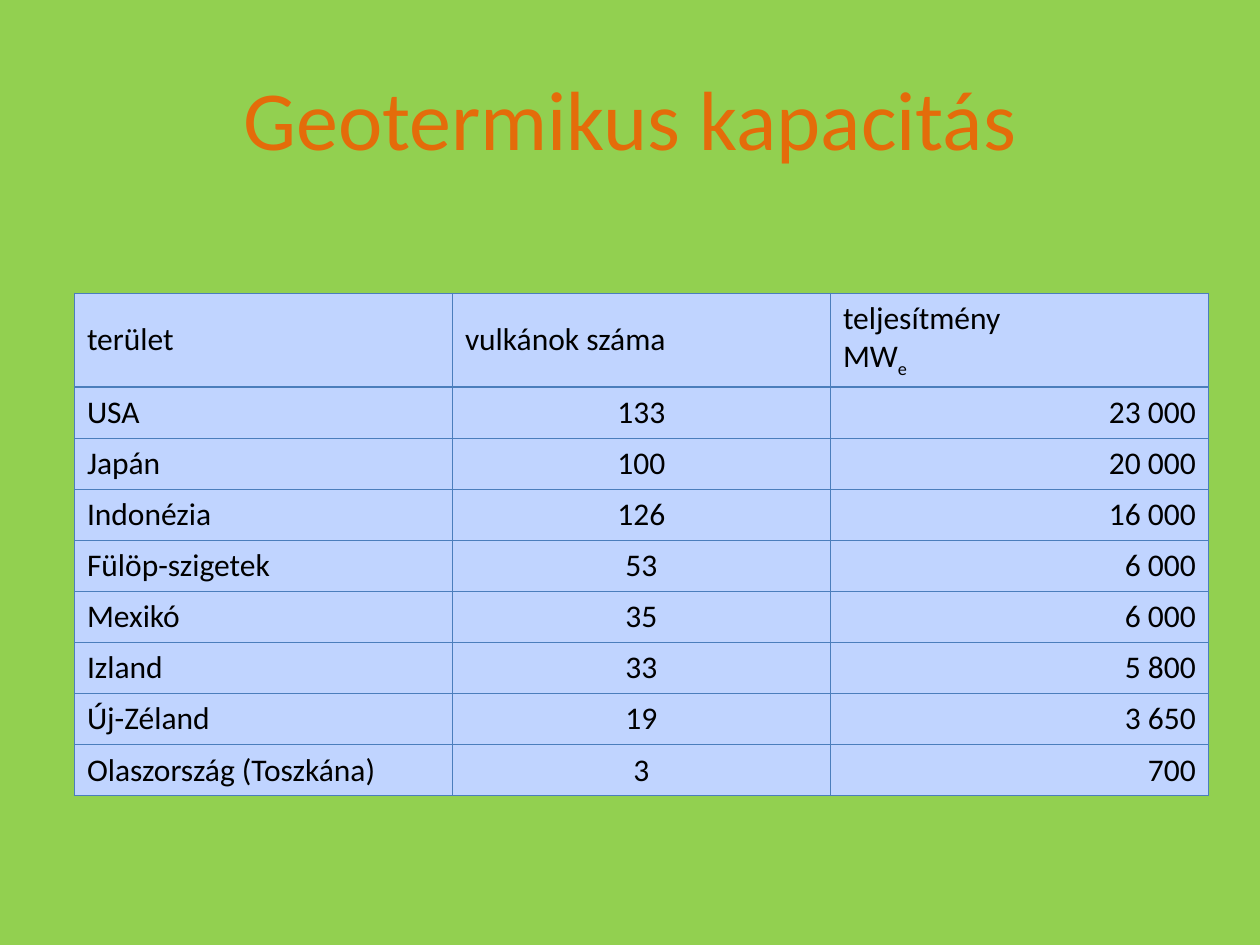
from dataclasses import dataclass

from lxml.etree import SubElement
from pptx import Presentation
from pptx.dml.color import RGBColor as Rgb
from pptx.enum.text import MSO_ANCHOR as Anchor, PP_ALIGN as Align
from pptx.oxml.ns import qn
from pptx.table import _Cell as Cell
from pptx.text.text import _Paragraph as Paragraph, _Run as Run
from pptx.util import Cm, Pt


@dataclass(frozen=True)
class Theme:
    font: str = "Calibri"
    background: str = "92D050"
    title: str = "E46C0A"
    text: str = "000000"
    cell: str = "C0D4FF"
    border: str = "4B7EBC"
    title_size: int = 48
    table_size: int = 18
    border_width: float = 0.75


@dataclass(frozen=True)
class Region:
    name: str
    volcanoes: int
    megawatts: int


THEME = Theme()
NO_BREAK_SPACE = " "
COLUMN_ALIGNMENTS = (Align.LEFT, Align.CENTER, Align.RIGHT)
COLUMN_WIDTH = Cm(7.62)
HEADER_HEIGHT = Cm(1.89)
ROW_HEIGHT = Cm(1.03)
REGIONS = (
    Region("USA", 133, 23000),
    Region("Japán", 100, 20000),
    Region("Indonézia", 126, 16000),
    Region("Fülöp-szigetek", 53, 6000),
    Region("Mexikó", 35, 6000),
    Region("Izland", 33, 5800),
    Region("Új-Zéland", 19, 3650),
    Region("Olaszország (Toszkána)", 3, 700),
)


def add_run(paragraph: Paragraph, text: str, size: int = THEME.table_size,
            color: str = THEME.text) -> Run:
    run = paragraph.add_run()
    run.text = text
    run.font.name = THEME.font
    run.font.size = Pt(size)
    run.font.color.rgb = Rgb.from_string(color)
    return run


def style_cell(cell: Cell) -> None:
    cell.vertical_anchor = Anchor.MIDDLE
    properties = cell._tc.get_or_add_tcPr()
    for side in ("a:lnL", "a:lnR", "a:lnT", "a:lnB"):
        line = SubElement(properties, qn(side), w=str(Pt(THEME.border_width)))
        line_fill = SubElement(line, qn("a:solidFill"))
        SubElement(line_fill, qn("a:srgbClr"), val=THEME.border)
    cell.fill.solid()
    cell.fill.fore_color.rgb = Rgb.from_string(THEME.cell)


def add_title(slide) -> None:
    title = slide.shapes.title
    title.left, title.top = Cm(1.27), Cm(0.76)
    title.width, title.height = Cm(22.86), Cm(3.18)
    title.text_frame.vertical_anchor = Anchor.MIDDLE
    paragraph = title.text_frame.paragraphs[0]
    paragraph.alignment = Align.CENTER
    add_run(paragraph, "Geotermikus kapacitás", THEME.title_size, THEME.title)


def add_header(table) -> None:
    area, volcanoes, output = (
        cell.text_frame.paragraphs[0] for cell in table.rows[0].cells)
    add_run(area, "terület")
    add_run(volcanoes, "vulkánok száma")
    add_run(output, "teljesítmény")
    output.add_line_break()
    add_run(output, "MW")
    subscript = add_run(output, "e")
    subscript.font._element.set("baseline", "-25000")


def add_capacity_table(slide) -> None:
    row_count, column_count = len(REGIONS) + 1, len(COLUMN_ALIGNMENTS)
    table = slide.shapes.add_table(
        row_count, column_count, Cm(1.5), Cm(5.91),
        COLUMN_WIDTH * column_count,
        HEADER_HEIGHT + ROW_HEIGHT * len(REGIONS)).table
    for row in table.rows:
        row.height = ROW_HEIGHT
    table.rows[0].height = HEADER_HEIGHT
    for cell in table.iter_cells():
        style_cell(cell)

    add_header(table)
    for row_index, region in enumerate(REGIONS, start=1):
        output = f"{region.megawatts:,}".replace(",", NO_BREAK_SPACE)
        values = (region.name, str(region.volcanoes), output)
        cells = table.rows[row_index].cells
        for cell, value, alignment in zip(cells, values, COLUMN_ALIGNMENTS):
            paragraph = cell.text_frame.paragraphs[0]
            paragraph.alignment = alignment
            add_run(paragraph, value)


def main() -> None:
    deck = Presentation()
    deck.slide_width, deck.slide_height = Cm(25.4), Cm(19.05)
    title_only = deck.slide_layouts[5]
    slide = deck.slides.add_slide(title_only)
    slide.background.fill.solid()
    slide.background.fill.fore_color.rgb = Rgb.from_string(THEME.background)
    add_title(slide)
    add_capacity_table(slide)
    deck.save("out.pptx")


if __name__ == "__main__":
    main()
